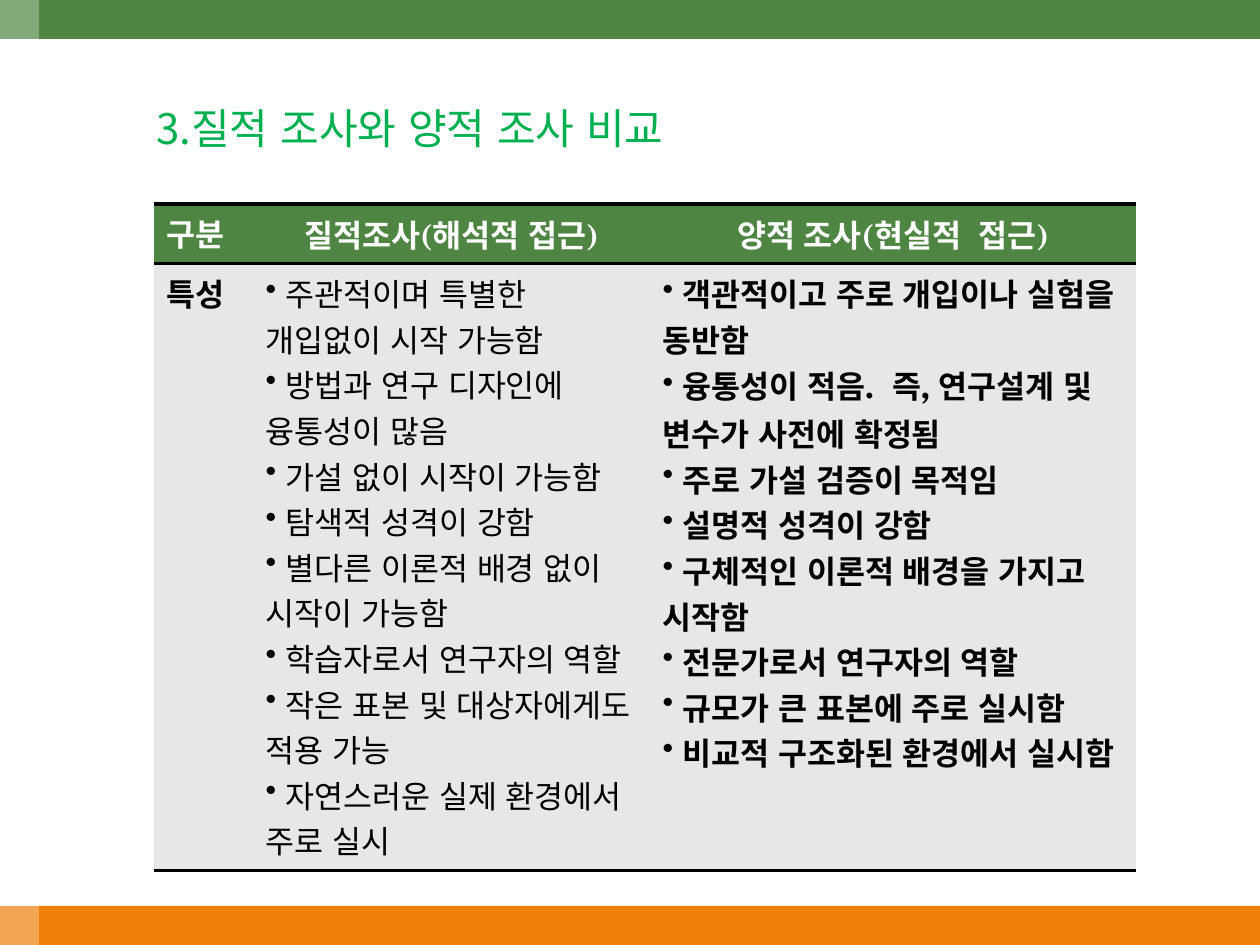
from lxml.etree import SubElement
from pptx import Presentation
from pptx.dml.color import RGBColor
from pptx.enum.lang import MSO_LANGUAGE_ID
from pptx.enum.shapes import MSO_SHAPE
from pptx.enum.text import PP_ALIGN
from pptx.oxml import parse_xml
from pptx.oxml.ns import nsdecls, qn
from pptx.util import Pt

SCALE = 914400 / 126
WIDE, HIGH, BAR = 1260, 945, 39

GREEN = RGBColor(0x4E, 0x85, 0x42)
ORANGE = RGBColor(0xF0, 0x7F, 0x09)
TITLE = RGBColor(0x00, 0xB0, 0x50)
GRAY = RGBColor(0xE7, 0xE7, 0xE7)
WHITE = RGBColor(0xFF, 0xFF, 0xFF)
BLACK = RGBColor(0x00, 0x00, 0x00)

SANS = "Noto Sans CJK KR"
SERIF = "TeX Gyre Schola"
PLAIN = "{2D5ABB26-0587-4C30-8999-92F81FD0307C}"

HEADS = ["구분", "질적조사(해석적 접근)", "양적 조사(현실적  접근)"]
QUALITY = [
    "주관적이며 특별한 개입없이 시작 가능함",
    "방법과 연구 디자인에 융통성이 많음",
    "가설 없이 시작이 가능함",
    "탐색적 성격이 강함",
    "별다른 이론적 배경 없이 시작이 가능함",
    "학습자로서 연구자의 역할",
    "작은 표본 및 대상자에게도 적용 가능",
    "자연스러운 실제 환경에서 주로 실시",
]
QUANTITY = [
    "객관적이고 주로 개입이나 실험을 동반함",
    "융통성이 적음.  즉, 연구설계 및  변수가 사전에 확정됨",
    "주로 가설 검증이 목적임",
    "설명적 성격이 강함",
    "구체적인 이론적 배경을 가지고 시작함",
    "전문가로서 연구자의 역할",
    "규모가 큰 표본에 주로 실시함",
    "비교적 구조화된 환경에서 실시함",
]


def px(num):
    return round(num * SCALE)


def write(frame, lines, size=18, color=BLACK, bold=False, font=SERIF,
          align=PP_ALIGN.LEFT, bullet=None):
    """Fill a text frame, one paragraph a line."""
    frame.word_wrap = True
    for i, line in enumerate(lines):
        para = frame.add_paragraph() if i else frame.paragraphs[0]
        para.alignment = align
        if bullet:
            mark = SubElement(para._p.get_or_add_pPr(), qn("a:buChar"))
            mark.set("char", bullet)
            line = " " + line
        run = para.add_run()
        run.text = line
        face = run.font
        face.size, face.bold, face.name = Pt(size), bold, font
        face.color.rgb = color
        face.language_id = MSO_LANGUAGE_ID.KOREAN
        # Hangul font
        SubElement(run._r.get_or_add_rPr(), qn("a:ea")).set("typeface", SANS)


def add_bar(slide, left, top, width, height, color, alpha=None):
    bar = slide.shapes.add_shape(
        MSO_SHAPE.RECTANGLE, px(left), px(top), px(width), px(height))
    bar.shadow.inherit = False
    bar.fill.solid()
    bar.fill.fore_color.rgb = color
    bar.line.fill.background()
    if alpha:
        tone = bar._element.spPr.find(".//" + qn("a:srgbClr"))
        SubElement(tone, qn("a:alpha")).set("val", str(alpha * 1000))


def add_title(slide, text):
    box = slide.shapes.add_textbox(px(144), px(96), px(983), px(70))
    write(box.text_frame, [text], size=24, color=TITLE, font=SANS)


def rule(cell, *sides):
    """Draw 2 pt black borders on the named sides, in schema order."""
    for i, side in enumerate(sides):
        line = parse_xml(
            f'<a:{side} {nsdecls("a")} w="{Pt(2)}"><a:solidFill>'
            f'<a:srgbClr val="{BLACK}"/></a:solidFill></a:{side}>')
        cell._tc.get_or_add_tcPr().insert(i, line)


def add_grid(slide):
    cols, rows = [99, 397, 486], [60, 607]
    grid = slide.shapes.add_table(
        len(rows), len(cols), px(154), px(204),
        px(sum(cols)), px(sum(rows))).table
    grid.first_row = grid.horz_banding = False
    grid._tbl.tblPr.find(qn("a:tableStyleId")).text = PLAIN
    for col, width in zip(grid.columns, cols):
        col.width = px(width)
    for row, height, fill in zip(grid.rows, rows, (GREEN, GRAY)):
        row.height = px(height)
        for cell in row.cells:
            cell.fill.solid()
            cell.fill.fore_color.rgb = fill
            rule(cell, "lnT", "lnB")

    # Header row
    for i, head in enumerate(HEADS):
        write(grid.cell(0, i).text_frame, [head], color=WHITE, bold=True,
              align=PP_ALIGN.CENTER if i else PP_ALIGN.LEFT)
    # Body row
    write(grid.cell(1, 0).text_frame, ["특성"], bold=True)
    write(grid.cell(1, 1).text_frame, QUALITY, bullet="•")
    write(grid.cell(1, 2).text_frame, QUANTITY, bold=True, bullet="•")


def main():
    deck = Presentation()
    deck.slide_width, deck.slide_height = px(WIDE), px(HIGH)
    slide = deck.slides.add_slide(deck.slide_layouts[6])
    # Frame bars
    add_bar(slide, 0, HIGH - BAR, WIDE, BAR, ORANGE)
    add_bar(slide, 0, 0, WIDE, BAR, GREEN)
    add_bar(slide, 0, 0, BAR, HIGH, WHITE, alpha=30)
    # Content
    add_title(slide, "3.질적 조사와 양적 조사 비교")
    add_grid(slide)
    deck.save("out.pptx")


if __name__ == "__main__":
    main()
